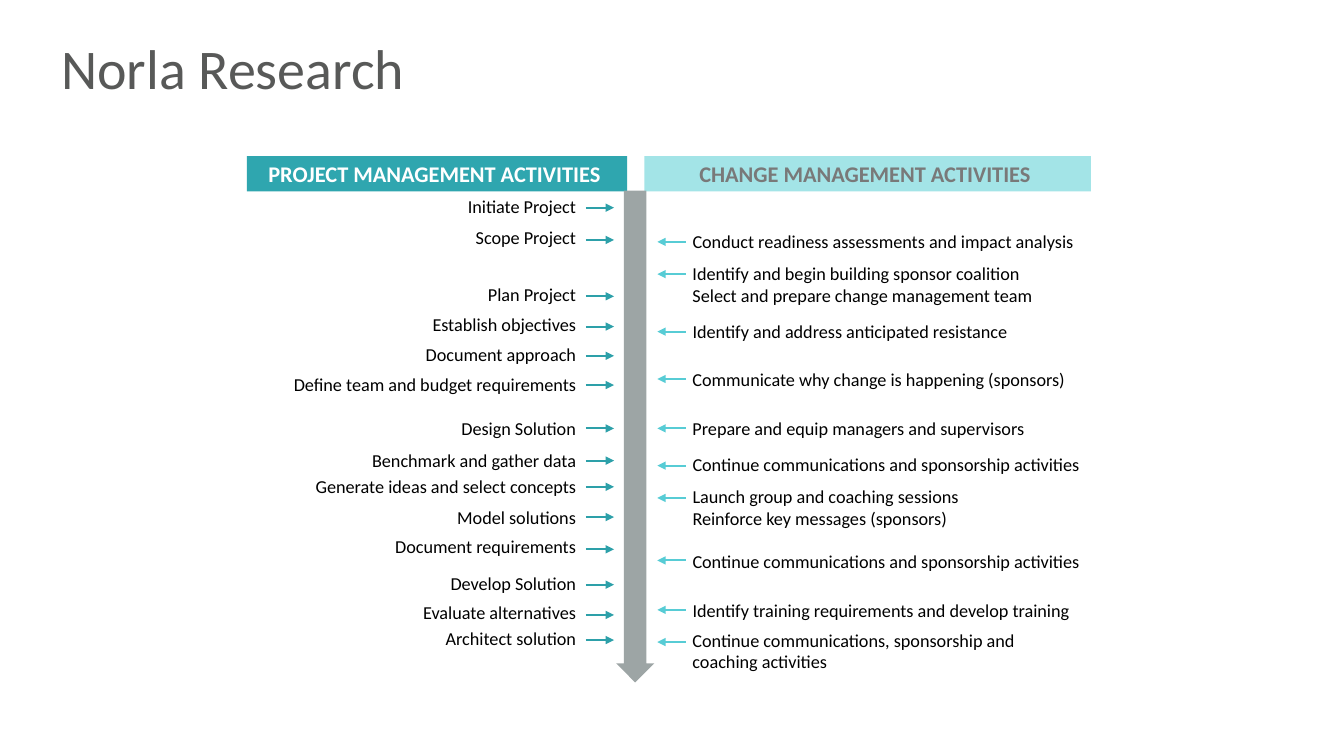
from collections import namedtuple

from lxml.etree import SubElement
from pptx import Presentation
from pptx.dml.color import RGBColor
from pptx.enum.shapes import MSO_CONNECTOR as Connector, MSO_SHAPE as Shape
from pptx.enum.text import MSO_ANCHOR as Anchor, MSO_AUTO_SIZE as AutoSize, PP_ALIGN as Align
from pptx.oxml.ns import qn
from pptx.util import Emu, Pt

WHITE = RGBColor(0xFF, 0xFF, 0xFF)
BLACK = RGBColor(0x00, 0x00, 0x00)
TITLE_GREY = RGBColor(0x58, 0x59, 0x58)
HEADER_GREY = RGBColor(0x79, 0x79, 0x79)
TIMELINE_GREY = RGBColor(0x9D, 0xA5, 0xA5)
TEAL = RGBColor(0x2F, 0xA6, 0xAF)
PALE_TEAL = RGBColor(0xA3, 0xE4, 0xE7)
TEAL_LINE = RGBColor(0x2D, 0xA0, 0xA9)
AQUA_LINE = RGBColor(0x57, 0xCC, 0xD5)

FONT = "Calibri"
HEADER_HEIGHT = 35
ARROW_LENGTH = 28
LINE_HEIGHT = 22

Box = namedtuple("Box", "left top width height")
Activity = namedtuple("Activity", "text top width arrow")

PROJECT_ACTIVITIES = [
    Activity("Initiate Project", 34, 130, 51),
    Activity("Scope Project", 65, 122, 83),
    Activity("Plan Project", 121, 109, 139),
    Activity("Establish objectives", 151, 166, 169),
    Activity("Document approach", 181, 172, 198),
    Activity("Define team and budget requirements", 210, 306, 227),
    Activity("Design Solution", 254, 136, 270),
    Activity("Benchmark and gather data", 286, 227, 302),
    Activity("Generate ideas and select concepts", 312, 284, 328),
    Activity("Model solutions", 342, 140, 358),
    Activity("Document requirements", 371, 203, 390),
    Activity("Develop Solution", 408, 147, 425),
    Activity("Evaluate alternatives", 437, 176, 455),
    Activity("Architect solution", 462, 152, 480),
]
CHANGE_ACTIVITIES = [
    Activity("Conduct readiness assessments and impact analysis", 69, 405, 85),
    Activity("Identify and begin building sponsor coalition\n"
             "Select and prepare change management team", 100, 364, 117),
    Activity("Identify and address anticipated resistance", 158, 339, 174),
    Activity("Communicate why change is happening (sponsors)", 205, 397, 221),
    Activity("Prepare and equip managers and supervisors", 254, 356, 270),
    Activity("Continue communications and sponsorship activities", 290, 412, 307),
    Activity("Launch group and coaching sessions\n"
             "Reinforce key messages (sponsors)", 322, 289, 339),
    Activity("Continue communications and sponsorship activities", 386, 412, 401),
    Activity("Identify training requirements and develop training", 435, 402, 450),
    Activity("Continue communications, sponsorship and\n"
             "coaching activities", 464, 393, 482),
]


def px(length):
    return Emu(length * 9144)


def write_text(frame, text, size, color, bold=False, align=Align.LEFT,
               anchor=Anchor.TOP, wrap=True, spacing=None, grow=False):
    frame.word_wrap = wrap
    frame.auto_size = AutoSize.SHAPE_TO_FIT_TEXT if grow else AutoSize.NONE
    frame.vertical_anchor = anchor
    for number, line in enumerate(text.split("\n")):
        para = frame.add_paragraph() if number else frame.paragraphs[0]
        para.alignment = align
        if spacing:
            para.line_spacing = spacing
        span = para.add_run()
        span.text = line
        span.font.name = FONT
        span.font.size = Pt(size)
        span.font.bold = bold
        span.font.color.rgb = color


def add_text(page, box, text, **style):
    textbox = page.shapes.add_textbox(*map(px, box))
    write_text(textbox.text_frame, text, **style)


def add_filled(page, kind, box, color):
    shape = page.shapes.add_shape(kind, *map(px, box))
    shape.shadow.inherit = False
    shape.fill.solid()
    shape.fill.fore_color.rgb = color
    shape.line.fill.background()
    return shape


def add_arrow(page, start, end, y, color):
    arrow = page.shapes.add_connector(
        Connector.STRAIGHT, px(start), px(y), px(end), px(y))
    arrow.line.color.rgb = color
    arrow.line.width = Pt(1.5)
    SubElement(arrow.line._get_or_add_ln(), qn("a:tailEnd"), type="triangle")
    SubElement(arrow._element.spPr, qn("a:effectLst"))


def add_header(page, box, text, fill, color):
    header = add_filled(page, Shape.RECTANGLE, box._replace(height=HEADER_HEIGHT), fill)
    frame = header.text_frame
    frame.margin_top = frame.margin_bottom = 0
    write_text(frame, text, size=16, color=color, bold=True,
               align=Align.CENTER, anchor=Anchor.MIDDLE)


def add_activity_text(page, left, top, activity, align):
    height = 32 + LINE_HEIGHT * activity.text.count("\n")
    add_text(page, Box(left, top + activity.top, activity.width, height), activity.text,
             size=13, color=BLACK, align=align, wrap=False, grow=True)


def add_project_column(page, box):
    add_header(page, box, "PROJECT MANAGEMENT ACTIVITIES ", TEAL, WHITE)
    text_right = box.left + box.width - 41
    for activity in PROJECT_ACTIVITIES:
        add_activity_text(page, text_right - activity.width, box.top, activity, Align.RIGHT)
        add_arrow(page, text_right, text_right + ARROW_LENGTH,
                  box.top + activity.arrow, TEAL_LINE)


def add_change_column(page, box):
    add_header(page, box, "CHANGE MANAGEMENT ACTIVITIES ", PALE_TEAL, HEADER_GREY)
    arrow_start = box.left + 41
    for activity in CHANGE_ACTIVITIES:
        add_activity_text(page, box.left + 38, box.top, activity, Align.LEFT)
        add_arrow(page, arrow_start, arrow_start - ARROW_LENGTH,
                  box.top + activity.arrow, AQUA_LINE)


def add_timeline(page, box):
    timeline = add_filled(page, Shape.DOWN_ARROW, box, TIMELINE_GREY)
    timeline.adjustments[0] = 0.59
    timeline.adjustments[1] = 0.5


def add_title(page, box):
    add_text(page, box, "Norla Research", size=40, color=TITLE_GREY, spacing=0.9)


def main():
    deck = Presentation()
    deck.slide_width = px(1333)
    deck.slide_height = px(750)
    page = deck.slides.add_slide(deck.slide_layouts[6])
    add_title(page, Box(51, 36, 1235, 82))
    add_change_column(page, Box(639, 155, 443, 522))
    add_project_column(page, Box(245, 155, 377, 522))
    add_timeline(page, Box(611, 189, 38, 488))
    deck.save("out.pptx")


if __name__ == "__main__":
    main()
